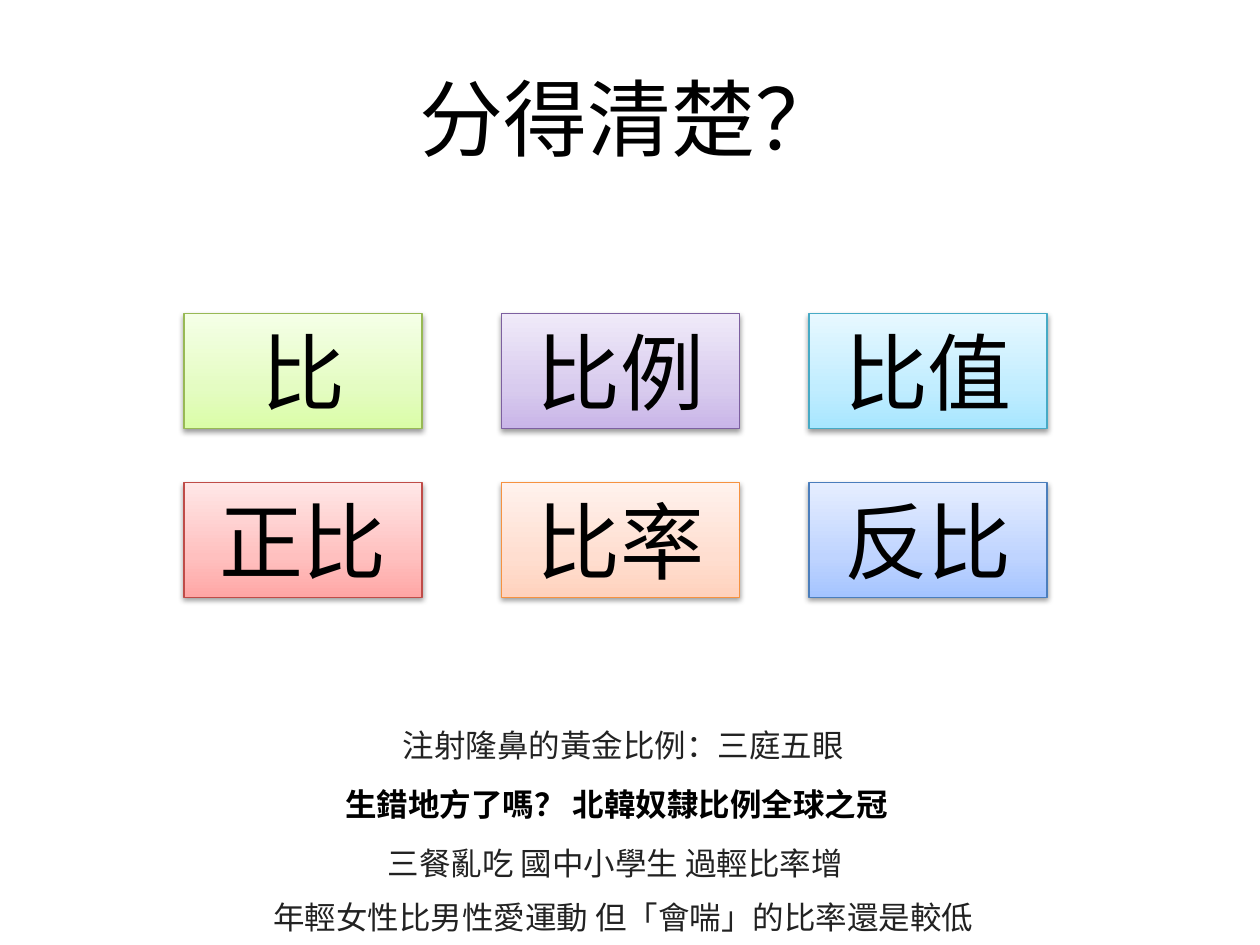
from copy import deepcopy

from lxml import etree
from pptx import Presentation
from pptx import util as u
from pptx.dml.color import RGBColor
from pptx.enum import shapes, text
from pptx.oxml import ns

BLACK = RGBColor(0, 0, 0)
DARK_GRAY = RGBColor(0x22, 0x22, 0x22)
CJK_FONT = "Noto Sans CJK SC"

COLUMNS = (1.46, 3.98, 6.42)
ROWS = (2.49, 3.83)
STOP_POSITIONS = (0, 0.35, 1)
TERMS = [
    ("比", "98B955", ("DAFDA7", "E4FCC2", "F5FFE7")),
    ("比例", "7D60A0", ("C9B5E8", "D8CBEE", "F0EAF9")),
    ("比值", "46AAC5", ("A7E6FF", "C1EDFF", "E7F8FF")),
    ("正比", "BF4C48", ("FFA6A5", "FFC0BF", "FFE7E7")),
    ("比率", "F69240", ("FFD2BD", "FFDED0", "FFF2ED")),
    ("反比", "4B7EBC", ("A4C4FF", "BFD4FF", "E6EEFF")),
]
JUSTIFIED = text.PP_ALIGN.JUSTIFY
HEADLINES = [
    ("注射隆鼻的黃金比例：三庭五眼", 3.1, 5.71, 3.77, True, JUSTIFIED, CJK_FONT, DARK_GRAY, False),
    ("生錯地方了嗎？ 北韓奴隸比例全球之冠", 2.64, 6.18, 4.57, False, None, "Roboto", BLACK, True),
    ("三餐亂吃 國中小學生 過輕比率增", 2.98, 6.65, 3.89, False, JUSTIFIED, CJK_FONT, DARK_GRAY, False),
    ("年輕女性比男性愛運動 但「會喘」的比率還是較低", 2.07, 7.08, 5.87, True, JUSTIFIED, CJK_FONT, DARK_GRAY, False),
]


def write_text(shape, content, size, font_name, color, alignment, bold=False):
    shape.text_frame.text = content
    paragraph = shape.text_frame.paragraphs[0]
    paragraph.alignment = alignment
    run = paragraph.runs[0]
    run.font.size = u.Pt(size)
    run.font.name = font_name
    run.font.bold = bold
    run.font.color.rgb = color
    east_asian = etree.SubElement(run.font._element, ns.qn("a:ea"))
    east_asian.set("typeface", CJK_FONT)


def apply_gradient(shape, colors):
    shape.fill.gradient()
    shape.fill.gradient_angle = 90
    stop_list = shape._element.spPr.find(".//" + ns.qn("a:gsLst"))
    stop_list.insert(1, deepcopy(stop_list[0]))
    for stop, position, color in zip(shape.fill.gradient_stops, STOP_POSITIONS, colors):
        stop.position = position
        stop.color.rgb = RGBColor.from_string(color)


def apply_shadow(shape):
    shape.shadow.inherit = False
    effects = shape._element.spPr.find(ns.qn("a:effectLst"))
    shadow = etree.SubElement(effects, ns.qn("a:outerShdw"), blurRad=str(u.Pt(3.1)),
                              dist=str(u.Pt(1.6)), dir="5400000", rotWithShape="0")
    color = etree.SubElement(shadow, ns.qn("a:srgbClr"), val="000000")
    etree.SubElement(color, ns.qn("a:alpha"), val="38000")


def add_title(slide):
    title = slide.shapes.title
    title.left, title.top = u.Inches(0.5), u.Inches(0.3)
    title.width, title.height = u.Inches(9), u.Inches(1.25)
    title.text_frame.vertical_anchor = text.MSO_ANCHOR.MIDDLE
    write_text(title, "分得清楚？", 48, "Times New Roman", BLACK, text.PP_ALIGN.CENTER)


def add_term(slide, index, content, line_color, colors):
    row, column = divmod(index, len(COLUMNS))
    shape = slide.shapes.add_shape(
        shapes.MSO_SHAPE.RECTANGLE, u.Inches(COLUMNS[column]), u.Inches(ROWS[row]),
        u.Inches(1.89), u.Inches(0.91))
    apply_gradient(shape, colors)
    shape.line.color.rgb = RGBColor.from_string(line_color)
    shape.line.width = u.Pt(0.75)
    apply_shadow(shape)
    frame = shape.text_frame
    frame.margin_top = frame.margin_bottom = 0
    frame.vertical_anchor = text.MSO_ANCHOR.MIDDLE
    write_text(shape, content, 48, CJK_FONT, BLACK, text.PP_ALIGN.CENTER)


def add_headline(slide, content, left, top, width, wrap, alignment, font_name, color, bold):
    box = slide.shapes.add_textbox(
        u.Inches(left), u.Inches(top), u.Inches(width), u.Inches(0.4))
    box.text_frame.word_wrap = wrap
    write_text(box, content, 18, font_name, color, alignment, bold)


def main():
    presentation = Presentation()
    presentation.slide_width = u.Inches(10)
    presentation.slide_height = u.Inches(7.5)
    slide = presentation.slides.add_slide(presentation.slide_layouts[5])
    add_title(slide)
    for index, term in enumerate(TERMS):
        add_term(slide, index, *term)
    for headline in HEADLINES:
        add_headline(slide, *headline)
    presentation.save("out.pptx")


if __name__ == "__main__":
    main()
